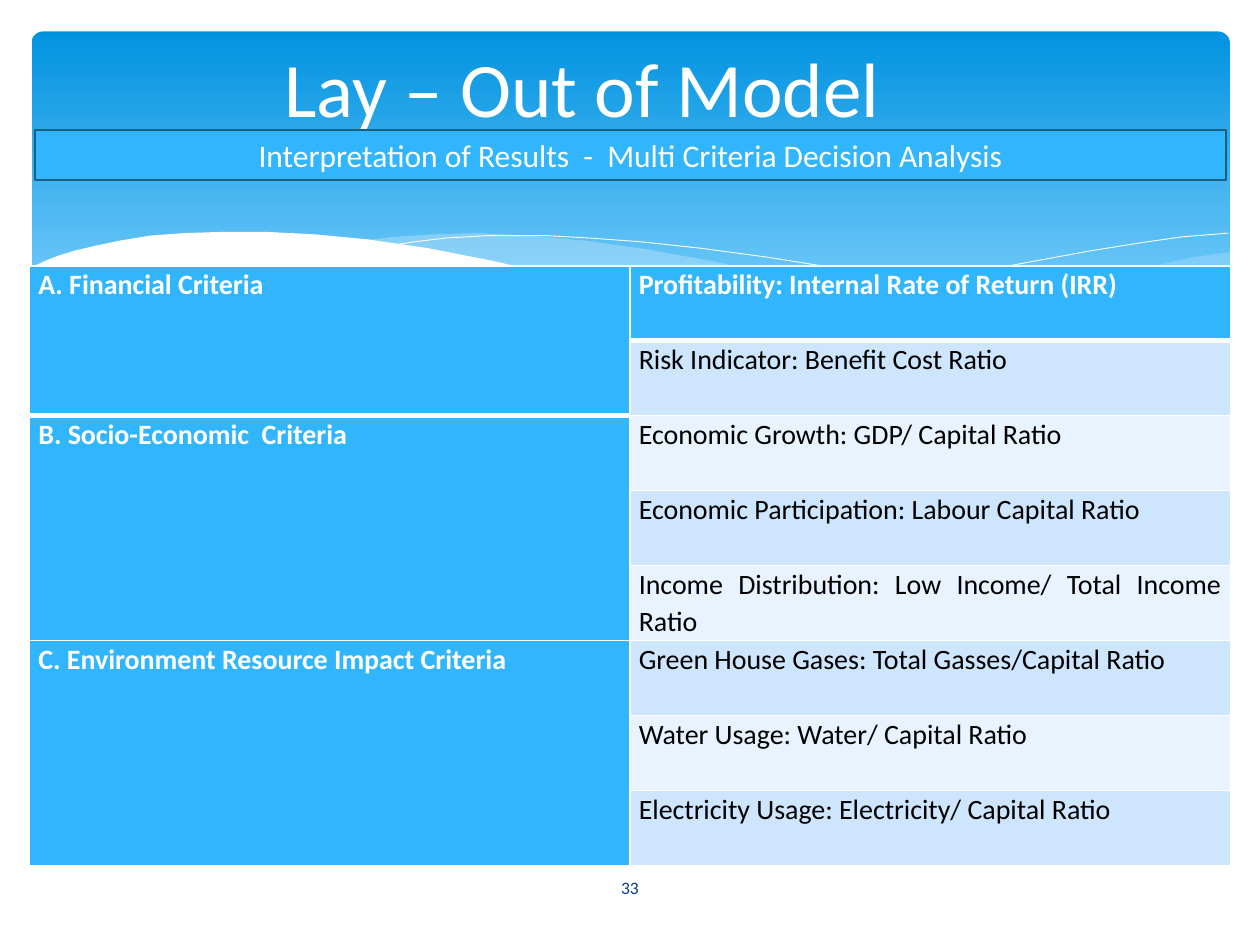
from lxml import etree
from pptx import Presentation
from pptx import util as u
from pptx.dml.color import RGBColor
from pptx.enum import shapes, text
from pptx.oxml.ns import qn

# Content
TITLE = "Lay – Out of Model"
SUBTITLE = "Interpretation of Results  -  Multi Criteria Decision Analysis"
PAGE = "33"
CRITERIA = [
    ("A. Financial Criteria", [
        "Profitability: Internal Rate of Return (IRR)",
        "Risk Indicator: Benefit Cost Ratio"]),
    ("B. Socio-Economic  Criteria", [
        "Economic Growth: GDP/ Capital Ratio",
        "Economic Participation: Labour Capital Ratio",
        "Income Distribution: Low Income/ Total Income Ratio"]),
    ("C. Environment Resource Impact Criteria", [
        "Green House Gases: Total Gasses/Capital Ratio",
        "Water Usage: Water/ Capital Ratio",
        "Electricity Usage: Electricity/ Capital Ratio"]),
]

# Style and layout
FONT = "Calibri"
WHITE, BLACK, BLUE, NAVY = "FFFFFF", "000000", "31B6FD", "073E87"
BANDS = ("E8F3FF", "CEE5FE")
WIDTH, HEIGHT = 10, 7.5
TABLE_LEFT, TABLE_TOP, TABLE_WIDTH, ROW_HEIGHT = 0.235, 2.11, 9.53, 0.595

# Waves: outline points in inches, fill, opacity in percent, closed
WAVES = [
    ([(9.76, 2), (9.48, 2.04), (9.06, 2.13), (8.61, 2.23), (8.05, 2.37), (7.29, 2.53),
      (6.61, 2.65), (7.05, 2.71), (7.57, 2.76), (8.14, 2.78), (8.63, 2.75),
      (9.05, 2.69), (9.42, 2.59), (9.76, 2.47)], "C6E7FC", 29, True),
    ([(8.93, 2.73), (8.37, 2.65), (7.75, 2.54), (7.06, 2.4), (6.29, 2.22), (5.69, 2.08),
      (5.14, 1.98), (4.65, 1.91), (4.2, 1.87), (3.8, 1.85), (3.44, 1.86), (3.13, 1.88),
      (2.86, 1.91), (3.42, 1.99), (4.04, 2.11), (4.91, 2.32), (5.66, 2.48),
      (6.34, 2.61), (6.95, 2.7), (7.48, 2.76), (8.07, 2.78), (8.57, 2.77)],
     "C6E7FC", 40, True),
    ([(3.09, 1.95), (3.28, 1.92), (3.53, 1.89), (3.87, 1.87), (4.33, 1.87), (4.69, 1.89),
      (5.1, 1.92), (5.56, 1.97), (6.08, 2.04), (6.65, 2.13), (7.27, 2.26),
      (7.95, 2.41), (8.69, 2.61), (9.07, 2.72)], None, 100, False),
    ([(6.13, 2.57), (6.53, 2.46), (6.95, 2.35), (7.48, 2.23), (8.06, 2.1), (8.66, 1.99),
      (9.1, 1.92), (9.38, 1.88), (9.75, 1.85)], None, 100, False),
    ([(9.77, 2.46), (9.5, 2.56), (9.2, 2.65), (8.87, 2.71), (8.5, 2.75), (8.09, 2.77),
      (7.61, 2.75), (7.08, 2.7), (6.48, 2.62), (5.79, 2.5), (5.03, 2.33), (4.47, 2.2),
      (3.91, 2.07), (3.4, 1.97), (2.92, 1.9), (2.5, 1.86), (2.11, 1.84), (1.77, 1.84),
      (1.46, 1.85), (1.19, 1.87), (0.95, 1.91), (0.76, 1.95), (0.59, 1.99),
      (0.46, 2.03), (0.36, 2.07), (0.23, 2.13), (0.23, 3.29), (9.77, 3.29)],
     WHITE, 100, True),
]


def rgb(value):
    return RGBColor.from_string(value)


def box(*lengths):
    return [u.Inches(length) for length in lengths]


def paint(shape, color):
    shape.fill.solid()
    shape.fill.fore_color.rgb = rgb(color)


def write(frame, words, size, color, align=text.PP_ALIGN.CENTER, bold=False):
    frame.word_wrap = True
    frame.vertical_anchor = text.MSO_ANCHOR.MIDDLE
    paragraph = frame.paragraphs[0]
    paragraph.text = words
    paragraph.alignment = align
    font = paragraph.font
    font.name, font.size, font.bold = FONT, u.Pt(size), bold
    font.color.rgb = rgb(color)
    return paragraph


def add_wave(slide, points, color, opacity, closed):
    start, *rest = [box(*point) for point in points]
    builder = slide.shapes.build_freeform(*start)
    builder.add_line_segments(rest, close=closed)
    wave = builder.convert_to_shape()
    wave.shadow.inherit = False
    if color is None:
        wave.fill.background()
        wave.line.color.rgb = rgb(WHITE)
        wave.line.width = u.Pt(0.5)
        return
    paint(wave, color)
    wave.line.fill.background()
    if opacity < 100:
        tint = wave.fill._xPr.find(qn("a:solidFill"))[0]
        etree.SubElement(tint, qn("a:alpha"), val=str(opacity * 1000))


def set_borders(cell, bottom):
    properties = cell._tc.get_or_add_tcPr()
    widths = {"a:lnL": 1, "a:lnR": 1, "a:lnT": 1, "a:lnB": bottom}
    for index, (side, width) in enumerate(widths.items()):
        line = etree.Element(qn(side), w=str(u.Pt(width)))
        fill = etree.SubElement(line, qn("a:solidFill"))
        etree.SubElement(fill, qn("a:srgbClr"), val=WHITE)
        properties.insert(index, line)


def fill_cell(cell, words, fill, color, bold, bottom=1):
    cell.margin_left = cell.margin_right = u.Inches(0.07)
    cell.margin_top = cell.margin_bottom = 0
    paint(cell, fill)
    set_borders(cell, bottom)
    if words:
        paragraph = write(cell.text_frame, words, 16, color, text.PP_ALIGN.JUSTIFY, bold)
        paragraph.line_spacing = 1.07
        paragraph.space_after = u.Pt(8)
        cell.vertical_anchor = text.MSO_ANCHOR.TOP


def add_criteria_table(slide):
    count = sum(len(indicators) for _, indicators in CRITERIA)
    table = slide.shapes.add_table(
        count, 2, *box(TABLE_LEFT, TABLE_TOP, TABLE_WIDTH, count * ROW_HEIGHT)).table
    row = 0
    for group, indicators in CRITERIA:
        first = row
        for indicator in indicators:
            header = row == 0
            fill_cell(table.cell(row, 0), group if row == first else "", BLUE, WHITE,
                      True, 3 if first == 0 else 1)
            fill_cell(table.cell(row, 1), indicator, BLUE if header else BANDS[row % 2],
                      WHITE if header else BLACK, header, 3 if header else 1)
            row += 1
        table.cell(first, 0).merge(table.cell(row - 1, 0))


def main():
    presentation = Presentation()
    presentation.slide_width, presentation.slide_height = box(WIDTH, HEIGHT)
    slide = presentation.slides.add_slide(presentation.slide_layouts[5])

    # Gradient header with waves
    header = slide.shapes.add_shape(shapes.MSO_SHAPE.ROUNDED_RECTANGLE,
                                    *box(0.25, 0.25, 9.51, 2.7))
    header.adjustments[0] = 0.034
    header.shadow.inherit = False
    header.line.fill.background()
    header.fill.gradient()
    header.fill.gradient_angle = 270
    for stop, color, position in zip(header.fill.gradient_stops,
                                     ("0293E0", "83D3FE"), (0, 0.9)):
        stop.color.rgb = rgb(color)
        stop.position = position
    for wave in WAVES:
        add_wave(slide, *wave)

    # Page number
    number = slide.shapes.add_textbox(*box(4.365, 6.84, 1.27, 0.4))
    write(number.text_frame, PAGE, 10, NAVY)

    # Title, raised above the header
    title = slide.shapes.title
    title.left, title.top, title.width, title.height = box(0.12, 0, 9, 1.37)
    write(title.text_frame, TITLE, 44, WHITE)
    slide.shapes._spTree.append(title._element)

    # Subtitle bar
    bar = slide.shapes.add_shape(shapes.MSO_SHAPE.RECTANGLE, *box(0.28, 1.03, 9.45, 0.4))
    bar.shadow.inherit = False
    paint(bar, BLUE)
    bar.line.color.rgb = rgb("195F84")
    bar.line.width = u.Pt(1.25)
    write(bar.text_frame, SUBTITLE, 18, WHITE)

    add_criteria_table(slide)
    presentation.save("out.pptx")


if __name__ == "__main__":
    main()
